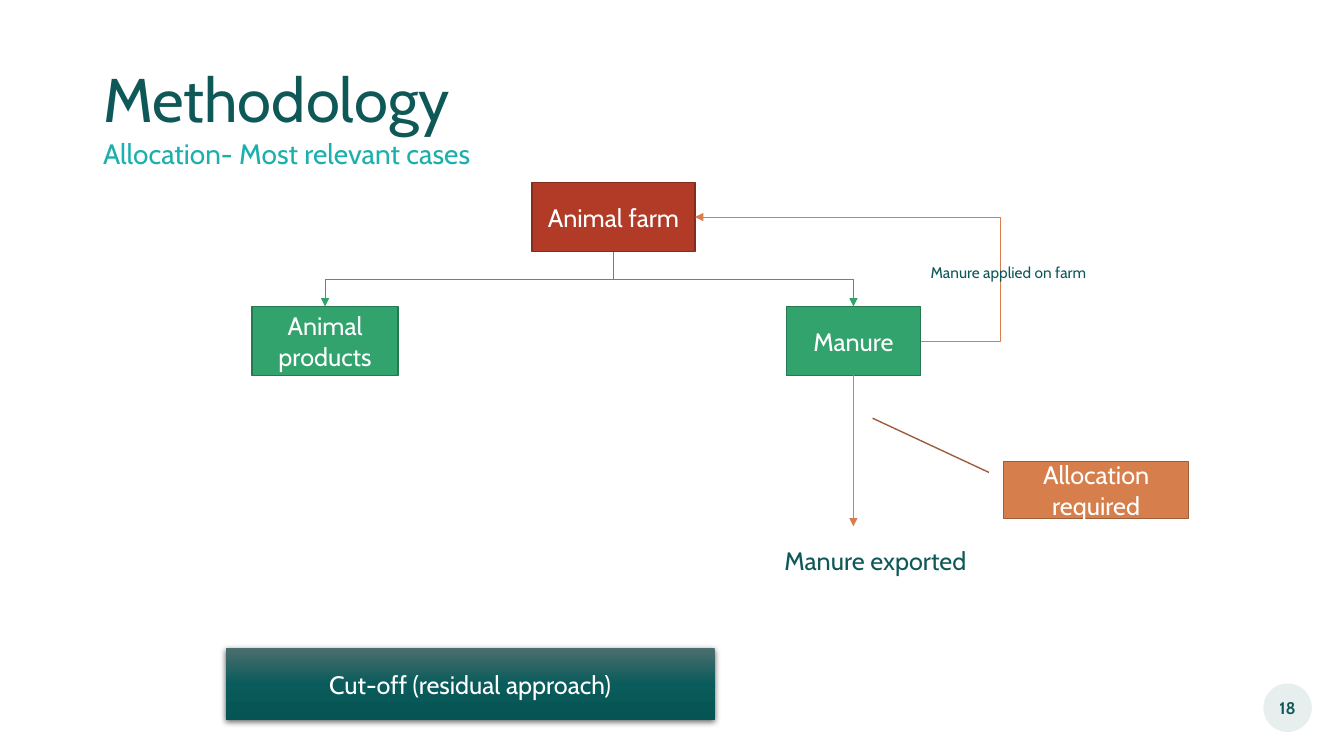
"""Build the methodology slide on the allocation of manure from an animal farm."""
from copy import deepcopy

from pptx import Presentation
from pptx.dml.color import RGBColor
from pptx.enum.shapes import MSO_CONNECTOR, MSO_SHAPE
from pptx.enum.text import MSO_ANCHOR, MSO_AUTO_SIZE, PP_ALIGN
from pptx.oxml import parse_xml
from pptx.oxml.ns import nsdecls, qn
from pptx.util import Pt

RECT, OVAL, CALLOUT = MSO_SHAPE.RECTANGLE, MSO_SHAPE.OVAL, MSO_SHAPE.LINE_CALLOUT_1
STRAIGHT, ELBOW = MSO_CONNECTOR.STRAIGHT, MSO_CONNECTOR.ELBOW
LEFT, CENTER = PP_ALIGN.LEFT, PP_ALIGN.CENTER
TOP, MIDDLE, BOTTOM = MSO_ANCHOR.TOP, MSO_ANCHOR.MIDDLE, MSO_ANCHOR.BOTTOM
NO_FIT = MSO_AUTO_SIZE.NONE

THEME = {
    "font": "Cabin",
    "size": {"title": 44, "subtitle": 20, "box": 18, "number": 12, "note": 11},
    "color": {name: RGBColor.from_string(value) for name, value in {
        "dark": "0F5858", "teal": "1DAFAE", "white": "FFFFFF", "badge": "E7EEEE",
        "red": "B23B27", "red_edge": "842C1D", "green": "32A36D", "green_edge": "257951",
        "orange": "D67F4D", "orange_edge": "9E5E39",
        "fade_top": "4C6E6E", "fade_mid": "0A5B5B", "fade_end": "065454"}.items()},
}
COLOR = THEME["color"]


def write(shape, text, size, color, align=LEFT, anchor=TOP, spacing=None, bold=False):
    """Put one formatted run into a shape."""
    frame = shape.text_frame
    frame.word_wrap = True
    frame.auto_size = NO_FIT
    frame.vertical_anchor = anchor
    paragraph = frame.paragraphs[0]
    paragraph.alignment = align
    paragraph.space_before = Pt(0)
    if spacing:
        paragraph.line_spacing = spacing
    run = paragraph.add_run()
    run.text = text
    run.font.name = THEME["font"]
    run.font.size = Pt(THEME["size"][size])
    run.font.bold = bold
    run.font.color.rgb = COLOR[color]


def arrow(kind, start, end, color):
    """Draw a thin connector with a triangle at its end."""
    connector = slide.shapes.add_connector(kind, *map(Pt, start + end))
    connector.line.color.rgb = COLOR[color]
    connector.line.width = Pt(0.5)
    line = connector.line._get_or_add_ln()
    line.append(parse_xml(f'<a:tailEnd {nsdecls("a")} type="triangle"/>'))
    connector.element.spPr.append(parse_xml(f'<a:effectLst {nsdecls("a")}/>'))
    return connector


presentation = Presentation()
presentation.slide_width, presentation.slide_height = Pt(960), Pt(540)
slide = presentation.slides.add_slide(presentation.slide_layouts[1])

title, subtitle = slide.placeholders
title.left, title.top, title.width, title.height = map(Pt, (66.4, 51.8, 545, 46.8))
write(title, "Methodology", "title", "dark", anchor=BOTTOM, spacing=0.7)
subtitle.left, subtitle.top, subtitle.width, subtitle.height = map(Pt, (66.4, 98.6, 398, 28))
properties = subtitle.text_frame.paragraphs[0]._p.get_or_add_pPr()
properties.set("marL", "0")
properties.set("indent", "0")
properties.append(parse_xml(f'<a:buNone {nsdecls("a")}/>'))
write(subtitle, "Allocation- Most relevant cases", "subtitle", "teal", spacing=0.8)

farm = (380, 130.5, 116.4, 49.2)
products = (180, 219, 104.4, 49.2)
manure = (561.6, 219, 96, 49.2)
allocation = (717, 329.8, 132, 40.4)
cutoff = (161.2, 463, 349.2, 51)
page_badge = (902.4, 488.2, 34.6, 34.6)

drawn = {}
for place, kind, text, fill, edge in (
    (farm, RECT, "Animal farm", "red", "red_edge"),
    (products, RECT, "Animal products", "green", "green_edge"),
    (manure, RECT, "Manure", "green", "green_edge"),
    (allocation, CALLOUT, "Allocation required", "orange", "orange_edge"),
    (cutoff, RECT, "Cut-off (residual approach)", "fade_mid", None),
    (page_badge, OVAL, "18", "badge", None),
):
    shape = drawn[place] = slide.shapes.add_shape(kind, *map(Pt, place))
    shape.shadow.inherit = False
    shape.fill.solid()
    shape.fill.fore_color.rgb = COLOR[fill]
    if edge:
        shape.line.color.rgb = COLOR[edge]
        shape.line.width = Pt(1)
    else:
        shape.line.fill.background()
    is_badge = place == page_badge
    if is_badge:
        shape.text_frame.margin_left = shape.text_frame.margin_right = 0
    write(shape, text, "number" if is_badge else "box", "dark" if is_badge else "white",
          CENTER, MIDDLE, bold=is_badge)

for index, value in enumerate((0.19, -0.08, -0.77, -0.71)):
    drawn[allocation].adjustments[index] = value

cutoff_fill = drawn[cutoff].fill
cutoff_fill.gradient()
cutoff_fill.gradient_angle = 270
cutoff_properties = drawn[cutoff].element.spPr
stop_list = cutoff_properties.find(".//" + qn("a:gsLst"))
stop_list.insert(1, deepcopy(stop_list[0]))
for stop, position, name in zip(cutoff_fill.gradient_stops, (0, 0.5, 1),
                                ("fade_top", "fade_mid", "fade_end")):
    stop.position = position
    stop.color.rgb = COLOR[name]
cutoff_properties.find(qn("a:effectLst")).append(parse_xml(
    f'<a:outerShdw {nsdecls("a")} blurRad="{Pt(4.5)}" dist="{Pt(1.5)}" dir="5400000" '
    'rotWithShape="0"><a:srgbClr val="000000"><a:alpha val="63000"/></a:srgbClr></a:outerShdw>'))

farm_x, farm_bottom = farm[0] + farm[2] / 2, farm[1] + farm[3]
for left, top, width, height in (products, manure):
    run_x, drop = left + width / 2 - farm_x, top - farm_bottom
    middle_x, middle_y = farm_x + run_x / 2, farm_bottom + drop / 2
    side = -1 if run_x < 0 else 1
    branch = arrow(ELBOW, (middle_x + side * drop / 2, middle_y - abs(run_x) / 2),
                   (middle_x - side * drop / 2, middle_y + abs(run_x) / 2), "green")
    branch.element.spPr.find(qn("a:xfrm")).set("rot", str((180 + side * 90) * 60000))

manure_x, manure_right = manure[0] + manure[2] / 2, manure[0] + manure[2]
return_flow = arrow(ELBOW, (manure_right, manure[1] + manure[3] / 2),
                    (farm[0] + farm[2], farm[1] + farm[3] / 2), "orange")
return_flow.element.spPr.find(qn("a:prstGeom")).get_or_add_avLst().append(
    parse_xml(f'<a:gd {nsdecls("a")} name="adj1" fmla="val -35200"/>'))
arrow(STRAIGHT, (manure_x, manure[1] + manure[3]), (manure_x, 376), "orange")

for place, text, size in (
    ((657.6, 184.5, 219.6, 20.6), "Manure applied on farm", "note"),
    ((553.2, 386, 234.7, 29), "Manure exported", "box"),
):
    write(slide.shapes.add_textbox(*map(Pt, place)), text, size, "dark")

presentation.save("out.pptx")
